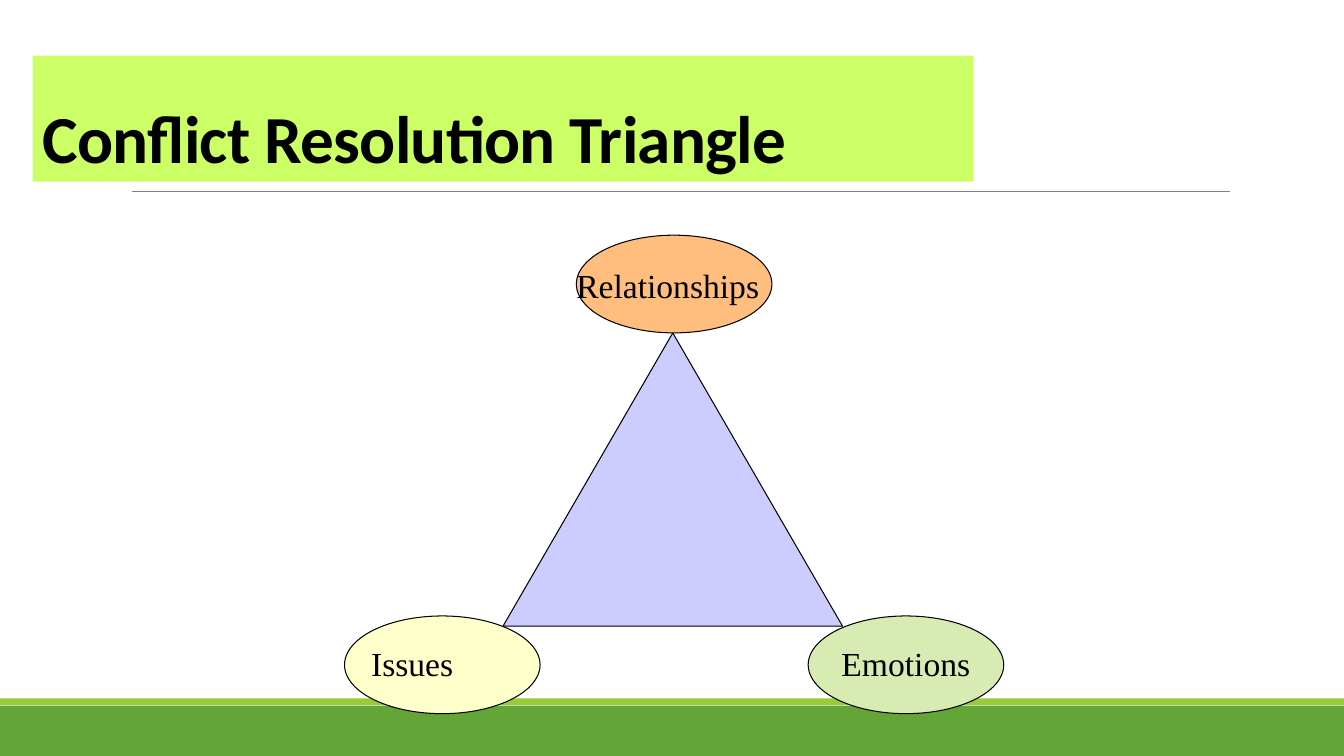
import pptx
import pptx.dml.color
import pptx.enum.shapes
import pptx.enum.text
import pptx.oxml.ns
import pptx.util
from lxml import etree

Pt = pptx.util.Pt
Shape = pptx.enum.shapes.MSO_SHAPE
Anchor = pptx.enum.text.MSO_ANCHOR
Align = pptx.enum.text.PP_ALIGN


def color(value):
    return pptx.dml.color.RGBColor.from_string(value)


def write(box, text, font="Times New Roman", size=24, bold=False, align=Align.LEFT,
          anchor=Anchor.TOP, line_spacing=1.0, tracking=0):
    """Fill a box with one paragraph; tracking is in points."""
    frame = box.text_frame
    frame.word_wrap = True
    frame.vertical_anchor = anchor
    para = frame.paragraphs[0]
    para.alignment = align
    para.line_spacing = line_spacing
    span = para.add_run()
    span.text = text
    span.font.name = font
    span.font.size = Pt(size)
    span.font.bold = bold
    span.font.color.rgb = color("000000")
    if tracking:
        span._r.get_or_add_rPr().set("spc", str(round(tracking * 100)))


class Page:
    outline = "000000"
    outline_width = 0.75

    def __init__(self, deck):
        self.shapes = deck.slides.add_slide(deck.slide_layouts[6]).shapes

    def shape(self, kind, left, top, width, height, fill, outlined=False):
        shape = self.shapes.add_shape(kind, Pt(left), Pt(top), Pt(width), Pt(height))
        shape.shadow.inherit = False
        shape.fill.solid()
        shape.fill.fore_color.rgb = color(fill)
        if outlined:
            shape.line.color.rgb = color(self.outline)
            shape.line.width = Pt(self.outline_width)
        else:
            shape.line.fill.background()
        return shape

    def rule(self, left, right, top, stroke, width):
        line = self.shapes.add_connector(pptx.enum.shapes.MSO_CONNECTOR.STRAIGHT,
                                         Pt(left), Pt(top), Pt(right), Pt(top))
        line.line.color.rgb = color(stroke)
        line.line.width = Pt(width)
        etree.SubElement(line._element.spPr, pptx.oxml.ns.qn("a:effectLst"))

    def label(self, text, left, top, width, **style):
        box = self.shapes.add_textbox(Pt(left), Pt(top), Pt(width), Pt(36))
        write(box, text, **style)


def main():
    deck = pptx.Presentation()
    deck.slide_width, deck.slide_height = Pt(960), Pt(540)
    page = Page(deck)

    page.shape(Shape.RECTANGLE, 0, 504, 960, 36, "63A537")
    page.shape(Shape.RECTANGLE, 0, 498.8, 960, 4.8, "99CB38")
    page.rule(94.3, 878.9, 136.7, "808080", 0.5)

    title = page.shape(Shape.RECTANGLE, 23.3, 39.8, 672, 90, "CCFF66")
    write(title, "Conflict Resolution Triangle", font="Calibri", size=48, bold=True,
          anchor=Anchor.BOTTOM, line_spacing=0.85, tracking=-0.5)

    page.shape(Shape.ISOSCELES_TRIANGLE, 359.3, 237.8, 242.6, 209.5, "CCCCFF", outlined=True)

    corner_left, corner_step = 246.1, 165.6
    corners = [
        ("Issues", 440, "FFFFCC", 258, 456, 102, Align.LEFT),
        ("Relationships", 168, "FFBE7D", 402, 186, 150, Align.CENTER),
        ("Emotions", 440, "D8EBB3", 594, 456, 108, Align.LEFT),
    ]
    for index, (text, top, fill, text_left, text_top, text_width, align) in enumerate(corners):
        page.shape(Shape.OVAL, corner_left + index * corner_step, top, 139.7, 69.8, fill,
                   outlined=True)
        page.label(text, text_left, text_top, text_width, align=align)

    deck.save("out.pptx")


if __name__ == "__main__":
    main()
